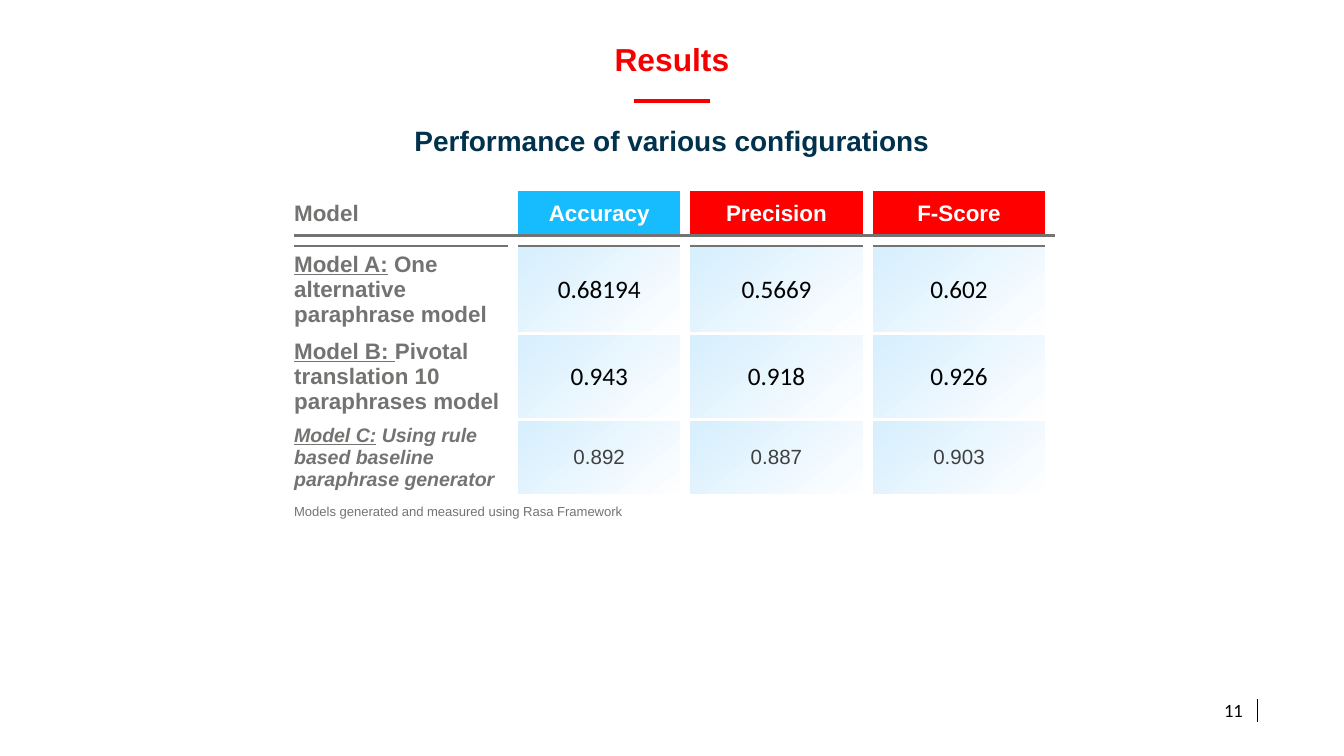
from lxml import etree
from pptx import Presentation
from pptx.dml.color import RGBColor
from pptx.enum.shapes import MSO_CONNECTOR
from pptx.enum.text import MSO_ANCHOR, MSO_AUTO_SIZE, PP_ALIGN
from pptx.oxml.ns import qn
from pptx.util import Cm, Pt

STRAIGHT = MSO_CONNECTOR.STRAIGHT
TOP, MIDDLE = MSO_ANCHOR.TOP, MSO_ANCHOR.MIDDLE
NO_AUTOFIT = MSO_AUTO_SIZE.NONE
LEFT, CENTER, RIGHT = PP_ALIGN.LEFT, PP_ALIGN.CENTER, PP_ALIGN.RIGHT
PLAIN_TABLE = "{2D5ABB26-0587-4C30-8999-92F81FD0307C}"
WHITE, GREY, RED, BLACK = "FFFFFF", "737472", "F50000", "000000"
PALE_BLUE = "D8EFFE"

LABEL = dict(name="Arial", size=Pt(12), bold=True, color=GREY)
SMALL_LABEL = dict(LABEL, size=Pt(10.5), italic=True)
HEADING = dict(LABEL, color=WHITE)
SCORE = dict(name="Calibri", size=Pt(13.5), bold=False, color=BLACK)
SMALL_SCORE = dict(name="Arial", size=Pt(11), bold=False, color="404040")
NOTE = dict(name="Arial", size=Pt(7), bold=False, color=GREY)

COLUMN_WIDTHS = [4.14, 3.25, 3.45, 3.45]
ROW_HEIGHTS = [0.84, 0.2, 1.65, 1.63, 1.43, 0.61]
METRICS = [("Accuracy", "17BCFF"), ("Precision", "FF0000"), ("F-Score", "FF0000")]
MODELS = [
    ("Model A:", " One alternative paraphrase model",
     ["0.68194", "0.5669", "0.602"], LABEL, SCORE),
    ("Model B: ", "Pivotal translation 10 paraphrases model",
     ["0.943", "0.918", "0.926"], LABEL, SCORE),
    ("Model C:", " Using rule based baseline paraphrase generator",
     ["0.892", "0.887", "0.903"], SMALL_LABEL, SMALL_SCORE),
]


def rgb(hex_color):
    """Turn a hex string into a colour."""
    return RGBColor.from_string(hex_color)


def add_run(paragraph, text, style):
    """Append a run formatted from a style dict."""
    run = paragraph.add_run()
    run.text = text
    for key, value in style.items():
        if key == "color":
            run.font.color.rgb = rgb(value)
        else:
            setattr(run.font, key, value)


def fill_frame(frame, text, style, align, line_spacing=None):
    """Write one paragraph into a frame without insets."""
    settings = dict(margin_left=0, margin_top=0, margin_right=0, margin_bottom=0,
                    word_wrap=True, auto_size=NO_AUTOFIT, vertical_anchor=TOP)
    for key, value in settings.items():
        setattr(frame, key, value)
    paragraph = frame.paragraphs[0]
    paragraph.alignment = align
    paragraph.line_spacing = line_spacing
    add_run(paragraph, text, style)


def add_rule(slide, start, end, color, width):
    """Draw a straight line between two points in centimetres."""
    rule = slide.shapes.add_connector(STRAIGHT, *map(Cm, start + end))
    rule.line.color.rgb = rgb(color)
    rule.line.width = Pt(width)
    etree.SubElement(rule._element.spPr, qn("a:effectLst"))


def add_header(slide, left, top, width):
    """Place the title, its red rule and the subtitle."""
    title = slide.shapes.title
    title.left, title.top, title.width, title.height = map(Cm, (left, top, width, 0.84))
    fill_frame(title.text_frame, "Results",
               dict(name="Arial", size=Pt(17), bold=True, color=RED), CENTER, Pt(18))
    middle = left + width / 2
    rule_y = top + 1.07
    add_rule(slide, (middle - 0.72, rule_y), (middle + 0.72, rule_y), RED, 2)
    subtitle = slide.shapes.add_textbox(
        Cm(middle - 8.57), Cm(top + 1.5), Cm(17.14), Cm(0.86))
    fill_frame(subtitle.text_frame, "Performance of various configurations",
               dict(name="Arial", size=Pt(15), bold=True, color="00324D"), CENTER, Pt(18))


def set_borders(cell, **borders):
    """Set cell borders given as side=(colour, points)."""
    properties = cell._tc.get_or_add_tcPr()
    for position, side in enumerate(s for s in "LRTB" if s in borders):
        color, width = borders[side]
        border = etree.Element(qn(f"a:ln{side}"), w=str(Pt(width)))
        solid = etree.SubElement(border, qn("a:solidFill"))
        etree.SubElement(solid, qn("a:srgbClr"), val=color)
        properties.insert(position, border)


def format_cell(cell, align, left_margin=0.2):
    """Set a cell's insets and alignment and return its paragraph."""
    settings = dict(margin_left=Cm(left_margin), margin_right=Cm(0.2),
                    margin_top=Cm(0.1), margin_bottom=Cm(0.1), vertical_anchor=MIDDLE)
    for key, value in settings.items():
        setattr(cell, key, value)
    paragraph = cell.text_frame.paragraphs[0]
    paragraph.alignment = align
    return paragraph


def fill_gradient(cell):
    """Fade a cell from pale blue at top left to white at bottom right."""
    cell.fill.gradient()
    cell.fill.gradient_angle = 130
    for stop, color, position in zip(cell.fill.gradient_stops, (WHITE, PALE_BLUE), (0, 0.93)):
        stop.color.rgb = rgb(color)
        stop.position = position


def add_heading_row(table):
    """Fill the heading row and the thin gap below it."""
    gutter, baseline = (WHITE, 6), (GREY, 1.5)
    label = table.cell(0, 0)
    add_run(format_cell(label, LEFT, 0), "Model", LABEL)
    label.fill.background()
    set_borders(label, R=gutter, B=baseline)
    for column, (metric, color) in enumerate(METRICS, 1):
        cell = table.cell(0, column)
        add_run(format_cell(cell, CENTER), metric, HEADING)
        cell.fill.solid()
        cell.fill.fore_color.rgb = rgb(color)
        set_borders(cell, L=gutter, R=gutter, B=baseline)
    gap = table.cell(1, 0)
    gap.merge(table.cell(1, len(METRICS)))
    paragraph = format_cell(gap, LEFT)
    gap.margin_top = gap.margin_bottom = 0
    etree.SubElement(paragraph._p, qn("a:endParaRPr"), sz="100")
    gap.fill.solid()
    gap.fill.fore_color.rgb = rgb(WHITE)
    for column in range(len(COLUMN_WIDTHS)):
        set_borders(table.cell(1, column), T=baseline)


def add_model_row(table, row, model):
    """Fill one row with a model's description and scores."""
    name, description, scores, label_style, score_style = model
    gutter, gap = (WHITE, 6), (WHITE, 1.5)
    label = table.cell(row, 0)
    paragraph = format_cell(label, LEFT, 0)
    add_run(paragraph, name, dict(label_style, underline=True))
    add_run(paragraph, description, label_style)
    label.fill.background()
    set_borders(label, R=gutter)
    for column, score in enumerate(scores, 1):
        cell = table.cell(row, column)
        add_run(format_cell(cell, CENTER), score, score_style)
        fill_gradient(cell)
        set_borders(cell, L=gutter, R=gutter, B=gap)


def add_results_table(slide, left, top):
    """Build the table of scores with its note."""
    frame = slide.shapes.add_table(
        len(ROW_HEIGHTS), len(COLUMN_WIDTHS), Cm(left), Cm(top),
        Cm(sum(COLUMN_WIDTHS)), Cm(sum(ROW_HEIGHTS)))
    table = frame.table
    table.first_row = table.horz_banding = False
    table._tbl.tblPr.find(qn("a:tableStyleId")).text = PLAIN_TABLE
    for column, width in zip(table.columns, COLUMN_WIDTHS):
        column.width = Cm(width)
    for row, height in zip(table.rows, ROW_HEIGHTS):
        row.height = Cm(height)
    add_heading_row(table)
    for row, model in enumerate(MODELS, 2):
        add_model_row(table, row, model)
    note = table.cell(len(ROW_HEIGHTS) - 1, 0)
    note.merge(table.cell(len(ROW_HEIGHTS) - 1, len(METRICS)))
    add_run(format_cell(note, LEFT, 0),
            "Models generated and measured using Rasa Framework", NOTE)
    note.fill.background()


def add_page_number(slide, left, top, width, height):
    """Place the page number and the thin line to its right."""
    number = slide.shapes.add_textbox(*map(Cm, (left, top, width, height)))
    fill_frame(number.text_frame, "11",
               dict(name="Calibri", size=Pt(10), color=BLACK), RIGHT)
    rule_x = left + width + 0.28
    add_rule(slide, (rule_x, top), (rule_x, top + height), BLACK, 0.5)


def main():
    """Build the results slide and save it."""
    deck = Presentation()
    deck.slide_width, deck.slide_height = Cm(25.4), Cm(14.29)
    slide = deck.slides.add_slide(deck.slide_layouts[5])
    add_header(slide, 1.27, 0.84, 22.86)
    add_results_table(slide, 5.56, 3.61)
    add_page_number(slide, 22.17, 13.21, 1.32, 0.43)
    deck.save("out.pptx")


if __name__ == "__main__":
    main()
